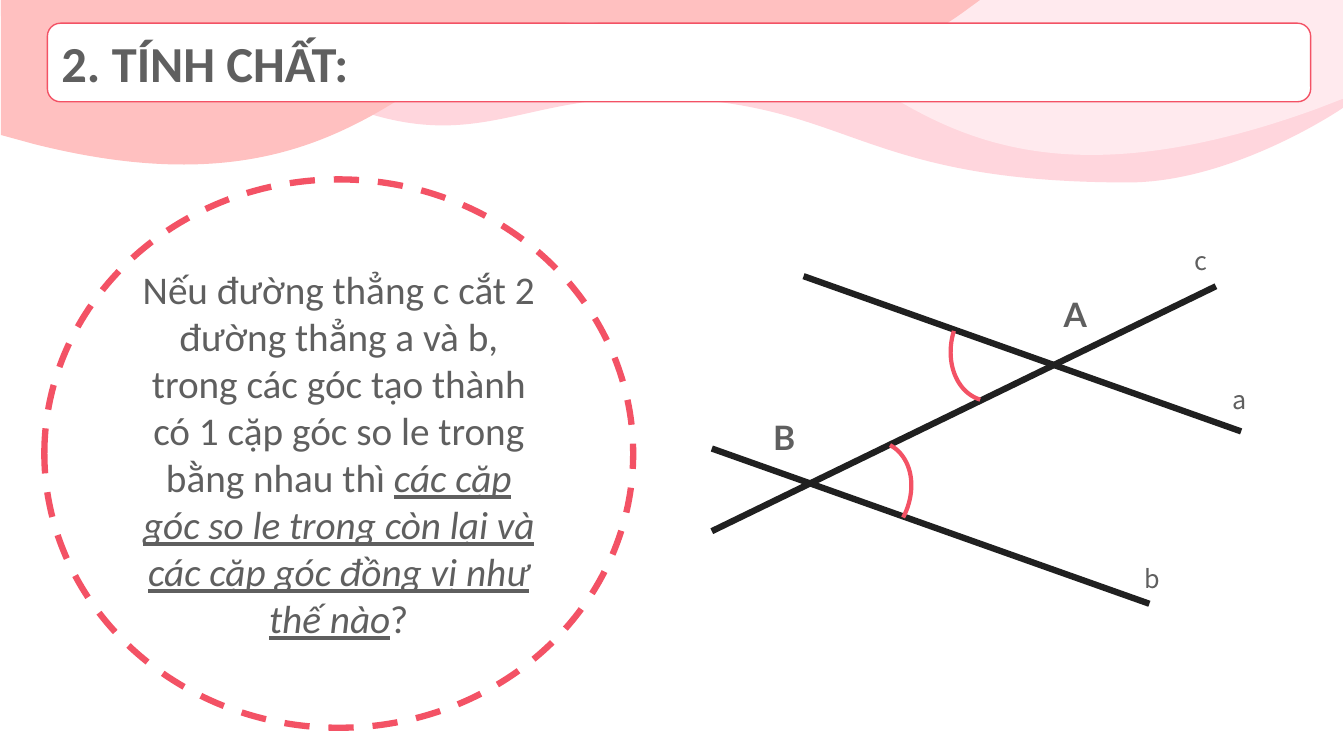
import lxml.etree
import pptx
import pptx.dml.color
import pptx.enum.dml
import pptx.enum.shapes
import pptx.enum.text
import pptx.oxml.ns
import pptx.util

Inches = pptx.util.Inches
qn = pptx.oxml.ns.qn
CENTER = pptx.enum.text.PP_ALIGN.CENTER
LEFT = pptx.enum.text.PP_ALIGN.LEFT
MIDDLE = pptx.enum.text.MSO_ANCHOR.MIDDLE
PRESET = pptx.enum.shapes.MSO_SHAPE
ROSE, GREY, BLACK, WHITE = "F35265", "5F5F5F", "202020", "FFFFFF"

WAVES = [
    ("FFD6DD", 1.81, [
        (0.01, 0), (13.32, 0), (13.32, 1.07), (13.32, 1.07),
        (13.19, 1.16, 12.17, 1.81, 11.19, 1.81), (8.44, 1.81, 8.44, 0.97, 6.4, 0.97),
        (5.23, 0.97, 4.77, 1.45, 3.7, 1.14), (3.7, 1.14, 3.7, 1.14, 3.7, 1.14),
        (3.42, 1.05, 3.09, 0.91, 2.7, 0.69), (0.93, -0.3, 0.11, 0.1, 0.01, 0.16),
        (0.01, 0.16)]),
    ("FFEAEE", 1.54, [
        (3.66, 0), (13.32, 0), (13.32, 0.98), (13.06, 1.08),
        (10.28, 2.09, 9.23, 1.19, 8.33, 0.64), (7.89, 0.38, 7.49, 0.19, 6.95, 0.34),
        (6.87, 0.37, 6.78, 0.39, 6.7, 0.41), (5.95, 0.59, 5.4, 0.62, 4.81, 0.47),
        (4.52, 0.39, 4.21, 0.27, 3.86, 0.1)]),
    ("FFC0C0", 1.63, [
        (0.01, 0), (9.72, 0), (9.57, 0.11),
        (9.21, 0.37, 8.82, 0.58, 8.33, 0.65), (7.89, 0.7, 7.36, 0.65, 6.7, 0.41),
        (6.69, 0.41, 6.68, 0.4, 6.66, 0.4), (5.86, 0.1, 5.32, 0.21, 4.81, 0.47),
        (4.45, 0.65, 4.11, 0.91, 3.7, 1.14), (3.7, 1.14, 3.7, 1.14, 3.7, 1.14),
        (2.96, 1.55, 2.01, 1.85, 0.34, 1.43), (0.01, 1.34)]),
]


def color(value):
    """Return the colour of a hex string."""
    return pptx.dml.color.RGBColor.from_string(value)


def set_fill(shape, value):
    """Fill a shape with one colour."""
    shape.fill.solid()
    shape.fill.fore_color.rgb = color(value)


def set_line(shape, value, width):
    """Give a shape or connector a coloured line."""
    shape.line.color.rgb = color(value)
    shape.line.width = pptx.util.Pt(width)


def set_font(para, name, size, bold=False):
    """Format a whole paragraph in the grey text colour."""
    para.font.name = name
    para.font.size = pptx.util.Pt(size)
    para.font.bold = bold
    para.font.color.rgb = color(GREY)


def add_wave(page, left, top, value, height, segments):
    """Draw one wave from corners and cubic curves."""
    corners = [(Inches(left + part[-2]), Inches(top + part[-1])) for part in segments]
    builder = page.shapes.build_freeform(*corners[0])
    builder.add_line_segments(corners[1:], close=True)
    wave = builder.convert_to_shape()
    wave.shadow.inherit = False
    set_fill(wave, value)
    wave.line.fill.background()
    wave.height = Inches(height)
    outline = next(wave._element.iter(qn("a:path")))
    outline.set("h", str(wave.height))
    for edge, part in zip(outline.findall(qn("a:lnTo")), segments[1:]):
        if len(part) == 6:
            curve = lxml.etree.Element(qn("a:cubicBezTo"))
            for x, y in zip(part[::2], part[1::2]):
                lxml.etree.SubElement(curve, qn("a:pt"),
                                      x=str(Inches(left + x) - wave.left),
                                      y=str(Inches(top + y) - wave.top))
            outline.replace(edge, curve)


def add_header(page, left, top, width, height, inset=0.04):
    """Place the title placeholder on a rounded bar above the waves."""
    bar = page.shapes.add_shape(PRESET.ROUNDED_RECTANGLE, Inches(left), Inches(top),
                                Inches(width), Inches(height))
    bar.shadow.inherit = False
    set_fill(bar, WHITE)
    set_line(bar, ROSE, 1)
    title = page.shapes.title
    page.shapes._spTree.append(title._element)
    title.left, title.top = Inches(left + inset), Inches(top)
    title.width, title.height = Inches(width - 2 * inset), Inches(height)
    title.text_frame.text = "2. TÍNH CHẤT:"
    title.text_frame.vertical_anchor = MIDDLE
    title.text_frame.auto_size = pptx.enum.text.MSO_AUTO_SIZE.NONE
    para = title.text_frame.paragraphs[0]
    para.alignment = LEFT
    set_font(para, "Calibri", 36, bold=True)


def add_question(page, left, top, width, height):
    """Place the question in a dashed ellipse."""
    ellipse = page.shapes.add_shape(PRESET.OVAL, Inches(left), Inches(top),
                                    Inches(width), Inches(height))
    ellipse.shadow.inherit = False
    set_fill(ellipse, WHITE)
    set_line(ellipse, ROSE, 4.5)
    ellipse.line.dash_style = pptx.enum.dml.MSO_LINE.DASH
    ellipse.text_frame.word_wrap = True
    ellipse.text_frame.vertical_anchor = MIDDLE
    para = ellipse.text_frame.paragraphs[0]
    para.alignment = CENTER
    set_font(para, "Calibri", 28)
    for text, stressed in (
        ("Nếu đường thẳng c cắt 2 đường thẳng a và b, trong các góc tạo thành "
         "có 1 cặp góc so le trong bằng nhau thì ", False),
        ("các cặp góc so le trong còn lại và các cặp góc đồng vị như thế nào", True),
        ("?", False),
    ):
        span = para.add_run()
        span.text = text
        span.font.color.rgb = color(GREY)
        if stressed:
            span.font.italic = span.font.underline = True


def add_label(page, text, left, top, width, height, name, size, bold):
    """Add a short label of the diagram."""
    box = page.shapes.add_textbox(Inches(left), Inches(top), Inches(width), Inches(height))
    box.text_frame.word_wrap = bold
    box.text_frame.text = text
    set_font(box.text_frame.paragraphs[0], name, size, bold)


def add_diagram(page, left, top):
    """Draw lines a, b and c with their points and alternate angles."""
    for x1, y1, x2, y2 in ((5, 0.46, 0, 2.89), (0.91, 0.36, 5.25, 1.9), (0, 2.07, 4.34, 3.61)):
        line = page.shapes.add_connector(
            pptx.enum.shapes.MSO_CONNECTOR.STRAIGHT,
            Inches(left + x1), Inches(top + y1), Inches(left + x2), Inches(top + y2))
        set_line(line, BLACK, 4.5)
        lxml.etree.SubElement(line._element.spPr, qn("a:effectLst"))
    for text, x, y, width in (("A", 3.39, 0.49, 0.67), ("B", 0.51, 1.71, 0.45)):
        add_label(page, text, left + x, top + y, width, 0.5, "Lato", 24, True)
    for text, x, y, width in (("a", 5.07, 1.38, 0.32), ("b", 4.19, 3.16, 0.34),
                              ("c", 4.69, 0, 0.31)):
        add_label(page, text, left + x, top + y, width, 0.4, "Noto Sans CJK SC", 18, False)
    for x, y, rotation in ((2.38, 0.46, 197.1), (1.05, 1.97, 27.8)):
        angle = page.shapes.add_shape(PRESET.ARC, Inches(left + x), Inches(top + y),
                                      Inches(0.9), Inches(1.15))
        angle.shadow.inherit = False
        angle.rotation = rotation
        angle.fill.background()
        set_line(angle, ROSE, 3)


def main():
    """Build and save the slide."""
    deck = pptx.Presentation()
    deck.slide_width, deck.slide_height = Inches(13.33), Inches(7.5)
    page = deck.slides.add_slide(deck.slide_layouts.get_by_name("Title Only"))
    for wave in WAVES:
        add_wave(page, 0, 0, *wave)
    add_header(page, 0.47, 0.23, 12.53, 0.78)
    add_question(page, 0.44, 1.78, 5.84, 5.44)
    add_diagram(page, 7.06, 2.38)
    deck.save("out.pptx")


if __name__ == "__main__":
    main()
